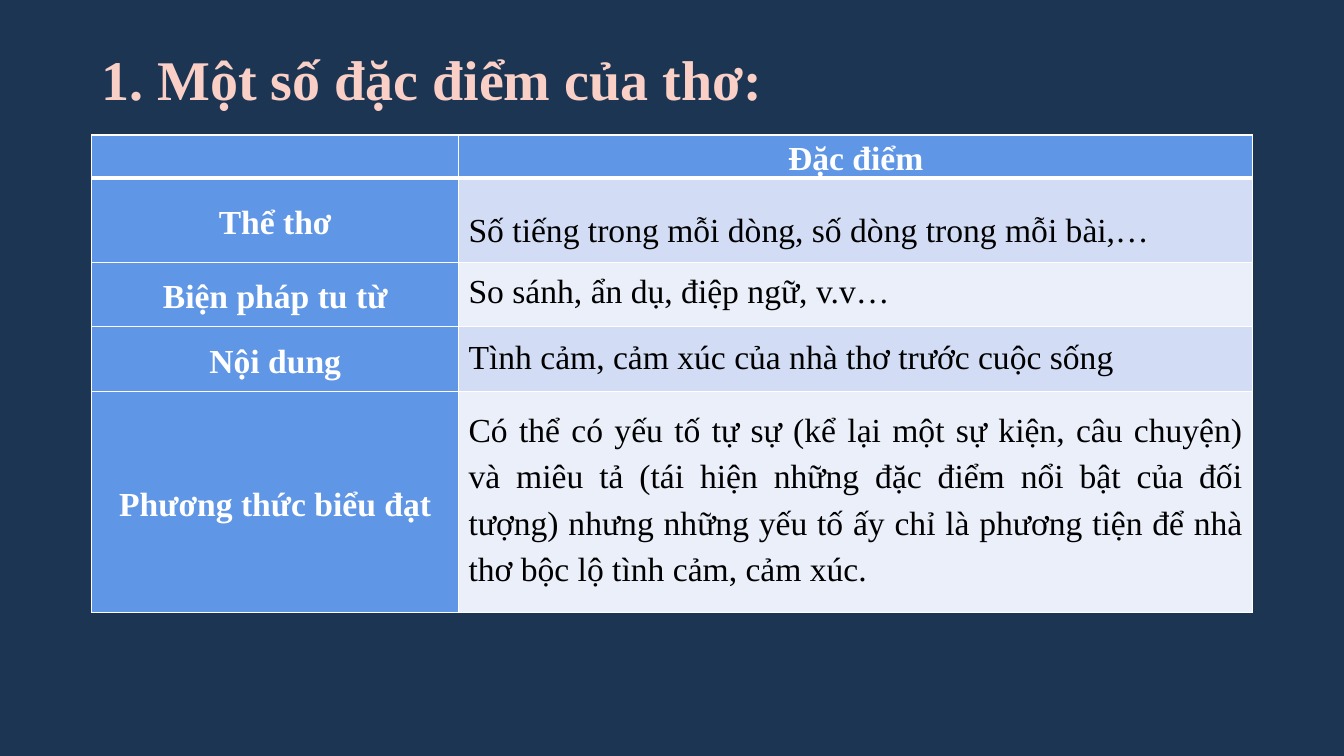
from pptx import Presentation
from pptx.dml.color import RGBColor
from pptx.enum.text import MSO_ANCHOR as Anchor, MSO_AUTO_SIZE as AutoSize, PP_ALIGN as Align
from pptx.oxml import parse_xml
from pptx.oxml.ns import nsdecls
from pptx.util import Cm, Pt

FONT = "Times New Roman"
NAVY, PINK, BLUE, WHITE, BLACK = "1B3553", "F9CFC6", "6096E6", "FFFFFF", "000000"
BANDS = ["D2DDF5", "EAEFFA"]
TABLE_LEFT, TABLE_TOP = 2.31, 3.4
COLUMN_WIDTHS = [9.25, 20.01]
HEADER_HEIGHT = 1.07

# Label, row height, description, then top, width and height of its box
FEATURES = [
    ("Thể thơ", 2.13, "Số tiếng trong mỗi dòng, số dòng trong mỗi bài,…", 4.98, 18.31, 1.35),
    ("Biện pháp tu từ", 1.63, "So sánh, ẩn dụ, điệp ngữ, v.v…", 6.53, 16.92, 1.35),
    ("Nội dung", 1.63, "Tình cảm, cảm xúc của nhà thơ trước cuộc sống", 8.18, 16.92, 1.35),
    ("Phương thức biểu đạt", 5.56,
     "Có thể có yếu tố tự sự (kể lại một sự kiện, câu chuyện) và miêu tả "
     "(tái hiện những đặc điểm nổi bật của đối tượng) nhưng những yếu tố ấy "
     "chỉ là phương tiện để nhà thơ bộc lộ tình cảm, cảm xúc.", 10.03, 20.01, 4.88),
]


def set_solid(fill, color):
    fill.solid()
    fill.fore_color.rgb = RGBColor.from_string(color)


def write_text(text_frame, text, size, color, align, bold=False):
    text_frame.text = text
    paragraph = text_frame.paragraphs[0]
    paragraph.alignment = align
    paragraph.line_spacing = 1.15
    for run in paragraph.runs:
        run.font.name = FONT
        run.font.size = Pt(size)
        run.font.bold = bold
        run.font.color.rgb = RGBColor.from_string(color)


def add_borders(cell, top, bottom):
    properties = cell._tc.get_or_add_tcPr()
    for side, width in (("L", 1), ("R", 1), ("T", top), ("B", bottom)):
        properties.append(parse_xml(
            f'<a:ln{side} {nsdecls("a")} w="{Pt(width)}"><a:solidFill>'
            f'<a:srgbClr val="{WHITE}"/></a:solidFill></a:ln{side}>'))


def format_cell(cell, row, color, text=""):
    add_borders(cell, 3 if row == 1 else 1, 3 if row == 0 else 1)
    set_solid(cell.fill, color)
    cell.margin_left = cell.margin_right = Cm(0.15)
    cell.margin_top = cell.margin_bottom = 0
    cell.vertical_anchor = Anchor.MIDDLE if row else Anchor.TOP
    if text:
        write_text(cell.text_frame, text, 24, WHITE, Align.CENTER, bold=True)


def add_title(slide, text):
    title = slide.shapes.title
    title.left, title.top, title.width, title.height = Cm(2.31), Cm(0.74), Cm(23.09), Cm(2.24)
    title.text_frame.auto_size = AutoSize.NONE
    title.text_frame.vertical_anchor = Anchor.TOP
    write_text(title.text_frame, text, 40, PINK, Align.JUSTIFY, bold=True)


def add_feature_table(slide):
    heights = [HEADER_HEIGHT] + [feature[1] for feature in FEATURES]
    table = slide.shapes.add_table(
        len(heights), 2, Cm(TABLE_LEFT), Cm(TABLE_TOP),
        Cm(sum(COLUMN_WIDTHS)), Cm(sum(heights))).table
    for column, width in zip(table.columns, COLUMN_WIDTHS):
        column.width = Cm(width)
    for row, height in zip(table.rows, heights):
        row.height = Cm(height)
    format_cell(table.cell(0, 0), 0, BLUE)
    format_cell(table.cell(0, 1), 0, BLUE, "Đặc điểm")
    for row, feature in enumerate(FEATURES, 1):
        format_cell(table.cell(row, 0), row, BLUE, feature[0])
        format_cell(table.cell(row, 1), row, BANDS[(row - 1) % 2])


def add_description(slide, text, top, width, height):
    box = slide.shapes.add_textbox(
        Cm(TABLE_LEFT + COLUMN_WIDTHS[0]), Cm(top), Cm(width), Cm(height))
    box.text_frame.word_wrap = True
    box.text_frame.auto_size = AutoSize.SHAPE_TO_FIT_TEXT
    write_text(box.text_frame, text, 24, BLACK, Align.JUSTIFY)


def main():
    presentation = Presentation()
    presentation.slide_width, presentation.slide_height = Cm(33.87), Cm(19.05)
    slide = presentation.slides.add_slide(presentation.slide_layouts[5])
    set_solid(slide.background.fill, NAVY)

    # Heading
    add_title(slide, "1. Một số đặc điểm của thơ:")

    # Table of features, with the descriptions over its right column
    add_feature_table(slide)
    for _, _, text, top, width, height in FEATURES:
        add_description(slide, text, top, width, height)

    presentation.save("out.pptx")


if __name__ == "__main__":
    main()
